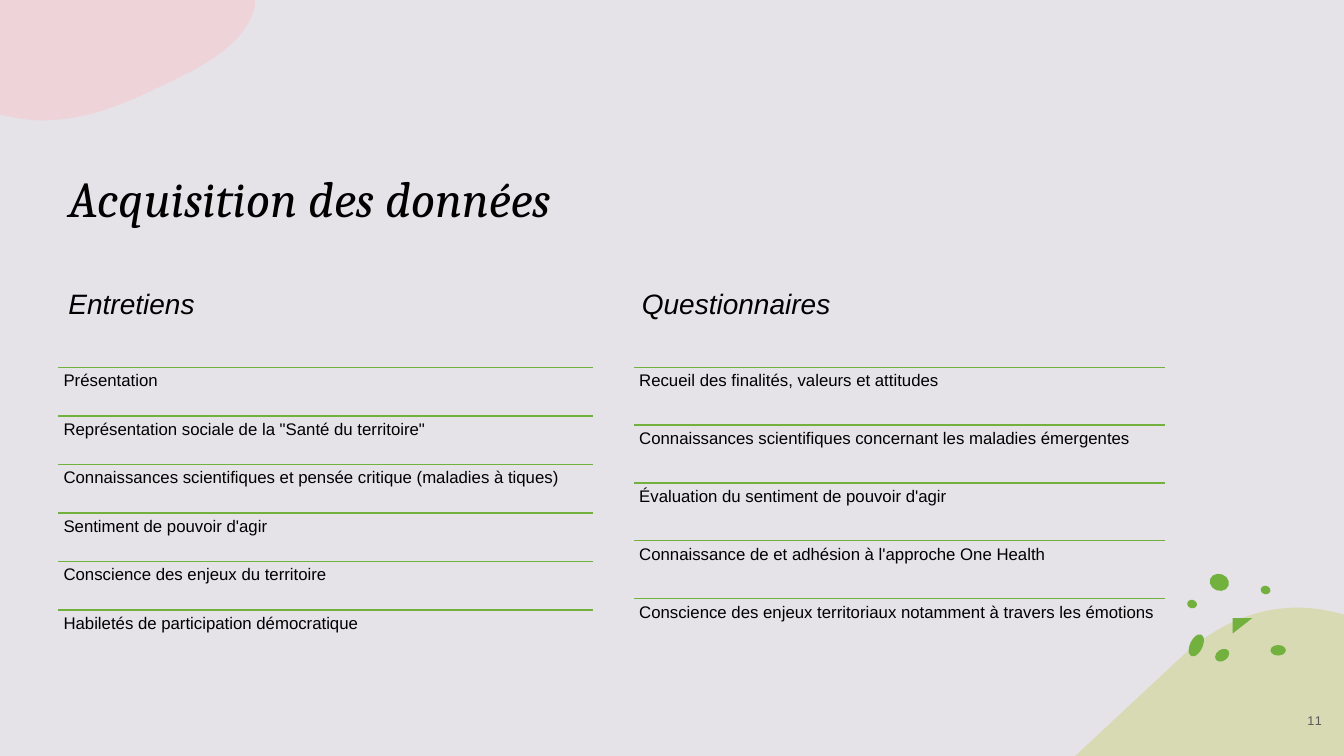
from dataclasses import dataclass, field
from typing import Any

from lxml.etree import SubElement
from pptx import Presentation
from pptx.dml.color import RGBColor
from pptx.enum.shapes import MSO_CONNECTOR as Connector, MSO_SHAPE as Preset
from pptx.enum.text import MSO_ANCHOR as Anchor, PP_ALIGN as Align
from pptx.oxml.ns import qn
from pptx.util import Pt

GREEN, OLIVE, PINK = "72B13E", "CAD47F", "F8C5CB"
BLACK, GREY, LAVENDER = "000000", "595959", "E5E2E8"
CURVE_STEPS = 24

Point = tuple[float, float]


@dataclass
class Hill:
    """Outline in points: a segment of 2 numbers is a line, of 6 a Bézier curve."""
    color: str
    start: Point
    segments: list[tuple[float, ...]]


@dataclass
class Drop:
    center: Point
    width: float
    height: float
    rotation: float = 0
    preset: Preset = Preset.OVAL


@dataclass
class Label:
    text: str
    left: float
    top: float
    width: float
    height: float
    font: dict[str, Any]
    color: str = BLACK
    side_inset: float = 7.2
    anchor: Anchor = Anchor.TOP
    paragraph: dict[str, Any] = field(default_factory=dict)
    tracking: int = 0


@dataclass
class Topic:
    heading: str
    heading_left: float
    left: float
    width: float
    row_height: float
    items: list[str]


def rgb(color: str) -> RGBColor:
    return RGBColor.from_string(color)


def bezier(start: Point, curve: tuple[float, ...]) -> list[Point]:
    x1, y1, x2, y2, x3, y3 = curve
    points = []
    for step in range(1, CURVE_STEPS + 1):
        t = step / CURVE_STEPS
        a, b, c, d = (1 - t) ** 3, 3 * t * (1 - t) ** 2, 3 * t * t * (1 - t), t ** 3
        points.append((a * start[0] + b * x1 + c * x2 + d * x3,
                       a * start[1] + b * y1 + c * y2 + d * y3))
    return points


def paint(shape, color: str) -> None:
    shape.shadow.inherit = False
    shape.line.fill.background()
    shape.fill.solid()
    shape.fill.fore_color.rgb = rgb(color)


def draw_hill(slide, hill: Hill) -> None:
    points = [hill.start]
    for segment in hill.segments:
        points += [segment] if len(segment) == 2 else bezier(points[-1], segment)
    first, *rest = [(Pt(x), Pt(y)) for x, y in points]
    builder = slide.shapes.build_freeform(*first, scale=1.0)
    builder.add_line_segments(rest, close=True)
    shape = builder.convert_to_shape()
    paint(shape, hill.color)
    fill_color = shape._element.spPr.find(qn("a:solidFill"))[0]
    SubElement(fill_color, qn("a:alpha")).set("val", "50000")


def draw_drop(slide, drop: Drop) -> None:
    x, y = drop.center
    shape = slide.shapes.add_shape(drop.preset, Pt(x - drop.width / 2), Pt(y - drop.height / 2),
                                   Pt(drop.width), Pt(drop.height))
    shape.rotation = drop.rotation
    paint(shape, GREEN)


def draw_label(slide, label: Label) -> None:
    box = slide.shapes.add_textbox(Pt(label.left), Pt(label.top), Pt(label.width), Pt(label.height))
    frame = box.text_frame
    layout = {"word_wrap": True, "vertical_anchor": label.anchor,
              "margin_left": Pt(label.side_inset), "margin_right": Pt(label.side_inset)}
    paragraph = frame.paragraphs[0]
    run = paragraph.add_run()
    run.text = label.text
    for target, values in ((frame, layout), (paragraph, label.paragraph), (run.font, label.font)):
        for name, value in values.items():
            setattr(target, name, value)
    run.font.color.rgb = rgb(label.color)
    if label.tracking:
        run._r.get_or_add_rPr().set("spc", str(label.tracking))


def draw_rule(slide, left: float, top: float, width: float) -> None:
    rule = slide.shapes.add_connector(Connector.STRAIGHT, Pt(left), Pt(top), Pt(left + width), Pt(top))
    rule.line.color.rgb = rgb(GREEN)
    rule.line.width = Pt(1)
    SubElement(rule._element.spPr, qn("a:effectLst"))


def draw_topic(slide, topic: Topic) -> None:
    draw_label(slide, Label(topic.heading, topic.heading_left, HEADING_TOP, 382, 61, HEADING_FONT,
                            paragraph={"line_spacing": 1.1, "space_before": Pt(10)}))
    for row, item in enumerate(topic.items):
        top = LIST_TOP + row * topic.row_height
        draw_rule(slide, topic.left, top, topic.width)
        draw_label(slide, Label(item, topic.left, top, topic.width, topic.row_height, ITEM_FONT,
                                side_inset=3.6,
                                paragraph={"line_spacing": 0.9, "space_after": Pt(4.2)}))


HEADING_TOP, LIST_TOP = 198.7, 262.4
TITLE_FONT = {"name": "Cambria", "size": Pt(36), "italic": True}
HEADING_FONT = {"name": "Arial", "size": Pt(20), "italic": True}
ITEM_FONT = {"name": "Arial", "size": Pt(12)}
NUMBER_FONT = {"name": "Arial", "size": Pt(9)}

# Decoration: corner hills and green drops
HILLS = [
    Hill(OLIVE, (768, 540), [(842, 471), (865, 449, 894, 434, 927, 434),
                             (938, 434, 949, 436, 960, 439), (960, 540)]),
    Hill(PINK, (0, 0), [(182, 0), (182, 4), (176, 32, 144, 48, 114, 62),
                        (89, 74, 62, 86, 30, 86), (20, 86, 10, 84, 0, 82)]),
]
DROPS = [
    Drop((873, 468), 11, 8, -35),
    Drop((854.5, 461), 9, 17, 25),
    Drop((913, 464.5), 11, 7.5),
    Drop((871, 416), 14, 12, 20),
    Drop((904, 421.5), 7, 6, 15),
    Drop((851.5, 431.5), 7, 6, 15),
    Drop((887.5, 447), 11, 14, 90, Preset.RIGHT_TRIANGLE),
]

# Content
TOPICS = [
    Topic("Entretiens", 41.8, 41.8, 381.6, 34.65, [
        "Présentation",
        'Représentation sociale de la "Santé du territoire"',
        "Connaissances scientifiques et pensée critique (maladies à tiques)",
        "Sentiment de pouvoir d'agir",
        "Conscience des enjeux du territoire",
        "Habiletés de participation démocratique"]),
    Topic("Questionnaires", 451.4, 453, 379, 41.3, [
        "Recueil des finalités, valeurs et attitudes",
        "Connaissances scientifiques concernant les maladies émergentes",
        "Évaluation du sentiment de pouvoir d'agir",
        "Connaissance de et adhésion à l'approche One Health",
        "Conscience des enjeux territoriaux notamment à travers les émotions"]),
]
TITLE = Label("Acquisition des données", 41.8, 62, 793.4, 104.4, TITLE_FONT, anchor=Anchor.BOTTOM)
PAGE_NUMBER = Label("11", 918, 500.4, 42, 28.8, NUMBER_FONT, GREY, anchor=Anchor.MIDDLE,
                    paragraph={"alignment": Align.CENTER}, tracking=110)


def main() -> None:
    deck = Presentation()
    deck.slide_width, deck.slide_height = Pt(960), Pt(540)
    slide = deck.slides.add_slide(deck.slide_layouts[6])
    slide.background.fill.solid()
    slide.background.fill.fore_color.rgb = rgb(LAVENDER)
    for hill in HILLS:
        draw_hill(slide, hill)
    for drop in DROPS:
        draw_drop(slide, drop)
    for label in (TITLE, PAGE_NUMBER):
        draw_label(slide, label)
    for topic in TOPICS:
        draw_topic(slide, topic)
    deck.save("out.pptx")


if __name__ == "__main__":
    main()
